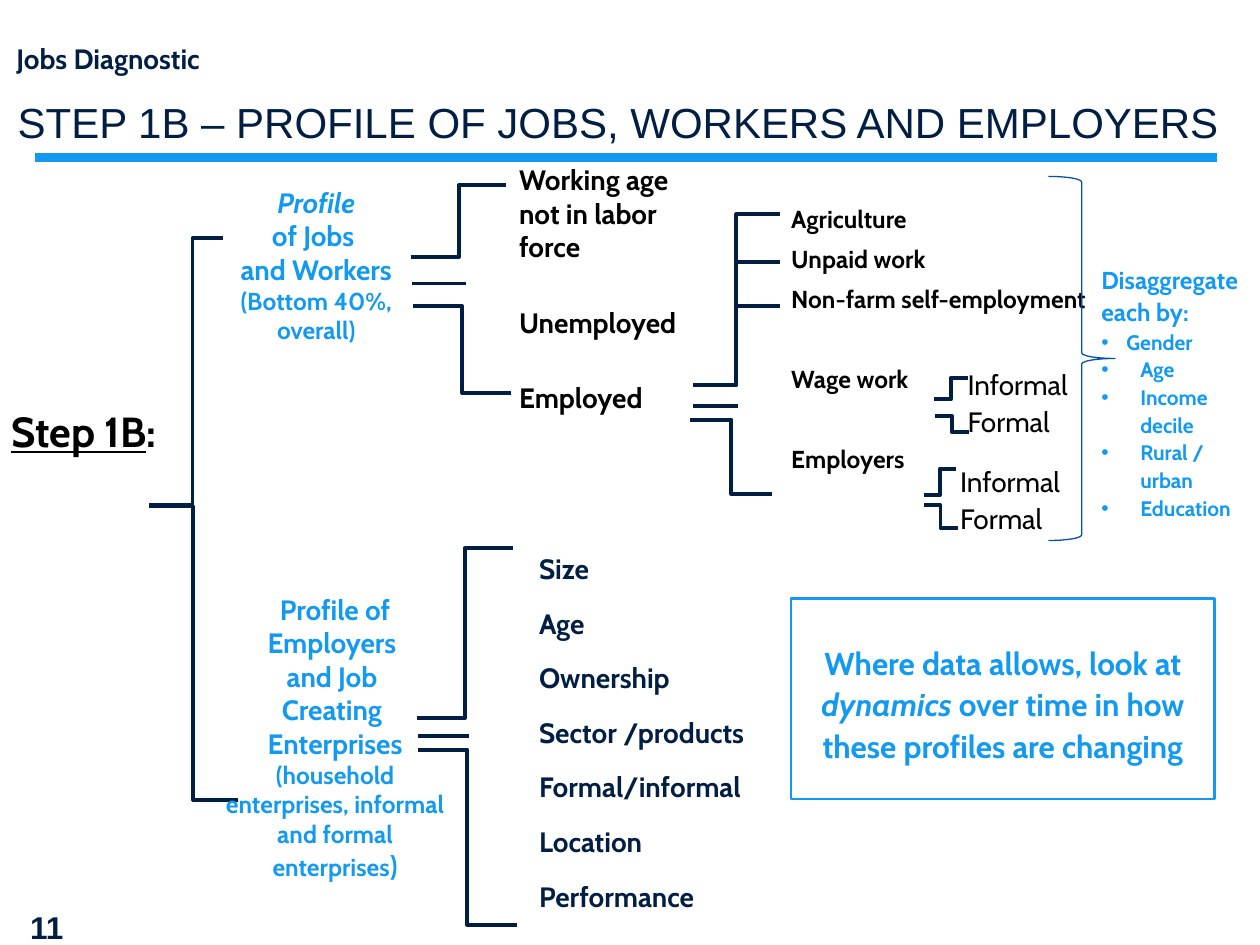
import pptx
import pptx.util
import pptx.dml.color
import pptx.enum.shapes
import pptx.enum.text
import pptx.oxml.ns
from lxml import etree

Inches, Pt = pptx.util.Inches, pptx.util.Pt
Align, Anchor = pptx.enum.text.PP_ALIGN, pptx.enum.text.MSO_ANCHOR
Connector, Preset = pptx.enum.shapes.MSO_CONNECTOR, pptx.enum.shapes.MSO_SHAPE
qn = pptx.oxml.ns.qn


class Theme:
    heading_font, text_font = "Arial", "Cabin"
    navy, sky, black, brace = "021F43", "139AF0", "000000", "0551AE"
    title, callout, large, medium, small = 24, 18, 16, 14, 12
    branch_width, rule_width, callout_width, brace_width = 2.25, 4.75, 1.25, 0.75


# Content: a paragraph is a string or a list of (text, run changes)
TITLE = "STEP 1B – PROFILE OF JOBS, WORKERS AND EMPLOYERS"
SECTION = ["Jobs Diagnostic"]
PAGE_NUMBER = ["11"]
STEP = [[("Step 1B", {"underline": True}), (":", {})]]
WORKERS = [
    [("Profile", {"italic": True})], "of Jobs ", "and Workers",
    [("(Bottom 40%, overall)", {"size": Theme.medium})],
]
EMPLOYERS = [
    "Profile of Employers ", "and Job ", "Creating ",
    [("Enterprises ", {}),
     ("(household enterprises, informal and formal enterprises", {"size": Theme.medium}),
     (")", {})],
]
LABOR_STATUS = ["Working age not in labor force", "Unemployed", "Employed"]
EMPLOYMENT = ["Agriculture", "Unpaid work", "Non-farm self-employment",
              "Wage work", "Employers"]
FORMALITY = ["Informal", "Formal"]
FIRM_TRAITS = ["Size", "Age", "Ownership", "Sector /products",
               "Formal/informal", "Location", "Performance"]
BREAKDOWN_HEADING = "Disaggregate each by:"
BREAKDOWN = ["Gender", "Age", "Income decile", "Rural / urban", "Education"]
CALLOUT = [[("Where data allows, look at ", {}), ("dynamics ", {"italic": True}),
            ("over time in how these profiles are changing", {})]]

# Branches: start x, start y, end x, end y, bend position
BRANCHES = [
    (1.18, 4.02, 1.89, 6.35, 0.5), (1.18, 4.01, 1.77, 1.89, 0.59),
    (3.26, 2.04, 4.02, 1.47, 0.5), (3.28, 2.43, 4.06, 3.12, 0.5),
    (5.5, 3.06, 6.19, 1.7, 0.5), (5.48, 3.33, 6.13, 3.92, 0.5),
    (3.31, 5.7, 4.07, 4.35, 0.5), (3.32, 5.95, 4.1, 7.34, 0.5),
    (7.41, 3.17, 7.68, 3, 0.5), (7.42, 3.3, 7.69, 3.43, 0.5),
    (7.33, 3.93, 7.59, 3.72, 0.5), (7.33, 4.01, 7.6, 4.19, 0.5),
]
# Level ticks: left, right, y
TICKS = [(3.27, 3.7, 2.25), (5.5, 5.86, 3.22), (5.86, 6.19, 2.43),
         (5.86, 6.19, 2.08), (3.32, 3.72, 5.84)]


def color(value):
    return pptx.dml.color.RGBColor.from_string(value)


def place(shape, left, top, width, height):
    shape.left, shape.top = Inches(left), Inches(top)
    shape.width, shape.height = Inches(width), Inches(height)


def write(shape, paragraphs, size, ink, font=Theme.text_font, bold=True,
          align=Align.LEFT, insets=(0, 0), anchor=Anchor.TOP,
          before=0, after=0, spacing=1.0):
    frame = shape.text_frame
    frame.word_wrap = True
    frame.auto_size = pptx.enum.text.MSO_AUTO_SIZE.NONE
    frame.vertical_anchor = anchor
    frame.margin_left = frame.margin_right = Inches(insets[0])
    frame.margin_top = frame.margin_bottom = Inches(insets[1])
    for index, content in enumerate(paragraphs):
        paragraph = frame.add_paragraph() if index else frame.paragraphs[0]
        paragraph.alignment, paragraph.line_spacing = align, spacing
        paragraph.space_before, paragraph.space_after = Pt(before), Pt(after)
        runs = [(content, {})] if isinstance(content, str) else content
        for text, changes in runs:
            run = paragraph.add_run()
            run.text = text
            run.font.name, run.font.bold = font, bold
            run.font.size = Pt(changes.get("size", size))
            run.font.italic = changes.get("italic", False)
            run.font.underline = changes.get("underline", False)
            run.font.color.rgb = color(ink)
    return frame


def add_text(slide, box, paragraphs, size, ink, **options):
    shape = slide.shapes.add_textbox(*map(Inches, box))
    return write(shape, paragraphs, size, ink, **options)


def add_line(slide, start, end, ink=Theme.navy, width=Theme.branch_width, bend=None):
    kind = Connector.STRAIGHT if bend is None else Connector.ELBOW
    line = slide.shapes.add_connector(kind, *map(Inches, (*start, *end)))
    line.line.color.rgb, line.line.width = color(ink), Pt(width)
    properties = line._element.spPr
    etree.SubElement(properties, qn("a:effectLst"))
    if bend is not None:
        guides = properties.find(qn("a:prstGeom")).get_or_add_avLst()
        etree.SubElement(guides, qn("a:gd"), name="adj1",
                         fmla=f"val {round(bend * 100000)}")


def add_outline(slide, preset, box, ink, width):
    shape = slide.shapes.add_shape(preset, *map(Inches, box))
    shape.shadow.inherit = False
    shape.fill.background()
    shape.line.color.rgb, shape.line.width = color(ink), Pt(width)
    return shape


def set_bullet(paragraph, mark, margin=0, indent=0):
    properties = paragraph._p.get_or_add_pPr()
    properties.set("marL", str(Inches(margin)))
    properties.set("indent", str(Inches(indent)))
    if mark:
        etree.SubElement(properties, qn("a:buFont"), typeface=Theme.heading_font)
        etree.SubElement(properties, qn("a:buChar"), char=mark)
    else:
        etree.SubElement(properties, qn("a:buNone"))


def main():
    presentation = pptx.Presentation()
    presentation.slide_width, presentation.slide_height = Inches(10), Inches(7.5)
    slide = presentation.slides.add_slide(presentation.slide_layouts[1])
    title, body = slide.placeholders[0], slide.placeholders[1]

    # Header and page number
    place(title, 0.14, 0.66, 9.86, 0.62)
    write(title, [TITLE], Theme.title, Theme.navy, font=Theme.heading_font,
          bold=False, anchor=Anchor.MIDDLE)
    add_text(slide, (0.13, 0.33, 9.62, 0.27), SECTION, Theme.large, Theme.navy)
    add_text(slide, (0.14, 7.16, 2.08, 0.2), PAGE_NUMBER, Theme.callout, Theme.navy,
             font=Theme.heading_font, insets=(0.1, 0.05))
    add_line(slide, (0.28, 1.25), (9.66, 1.25), Theme.sky, Theme.rule_width)

    # Tree lines
    for left, top, right, bottom, bend in BRANCHES:
        add_line(slide, (left, top), (right, bottom), bend=bend)
    for left, right, level in TICKS:
        add_line(slide, (left, level), (right, level))

    # Tree labels
    add_text(slide, (0, 3.22, 1.33, 0.4), STEP, Theme.title, Theme.black,
             align=Align.CENTER)
    add_text(slide, (1.9, 1.47, 1.22, 1.55), WORKERS, Theme.large, Theme.sky,
             align=Align.CENTER)
    add_text(slide, (1.68, 4.65, 1.96, 2.42), EMPLOYERS, Theme.large, Theme.sky,
             align=Align.CENTER, insets=(0.1, 0.05))
    add_text(slide, (4.12, 1.29, 1.42, 2.02), LABOR_STATUS, Theme.large, Theme.black,
             before=24)
    employment = add_text(slide, (6.28, 1.62, 2.43, 2.39), EMPLOYMENT, Theme.medium,
                          Theme.black, before=6)
    for paragraph in employment.paragraphs[3:]:
        paragraph.space_before = Pt(29)
    for left, top in ((7.68, 2.89), (7.62, 3.66)):
        add_text(slide, (left, top, 1.06, 0.6), FORMALITY, Theme.large, Theme.black,
                 bold=False, spacing=1.1)
    add_text(slide, (4.18, 4.33, 2.59, 3), FIRM_TRAITS, Theme.large, Theme.navy,
             insets=(0.1, 0.05), after=12)

    # Breakdown list beside its brace
    add_outline(slide, Preset.RIGHT_BRACE, (8.32, 1.4, 0.53, 2.89),
                Theme.brace, Theme.brace_width)
    place(body, 8.74, 2.08, 1.21, 2.07)
    heading = [(BREAKDOWN_HEADING, {"size": Theme.medium})]
    breakdown = write(body, [heading, *BREAKDOWN], Theme.small, Theme.sky, spacing=1.1)
    for index, paragraph in enumerate(breakdown.paragraphs):
        if index == 0:
            set_bullet(paragraph, None)
        else:
            set_bullet(paragraph, "•", 0.2 if index == 1 else 0.31, -0.31)

    # Callout
    callout = add_outline(slide, Preset.RECTANGLE, (6.28, 4.75, 3.36, 1.59),
                          Theme.sky, Theme.callout_width)
    frame = write(callout, CALLOUT, Theme.callout, Theme.sky, align=Align.CENTER,
                  spacing=1.1)
    frame.margin_top = Inches(0.33)

    presentation.save("out.pptx")


if __name__ == "__main__":
    main()
